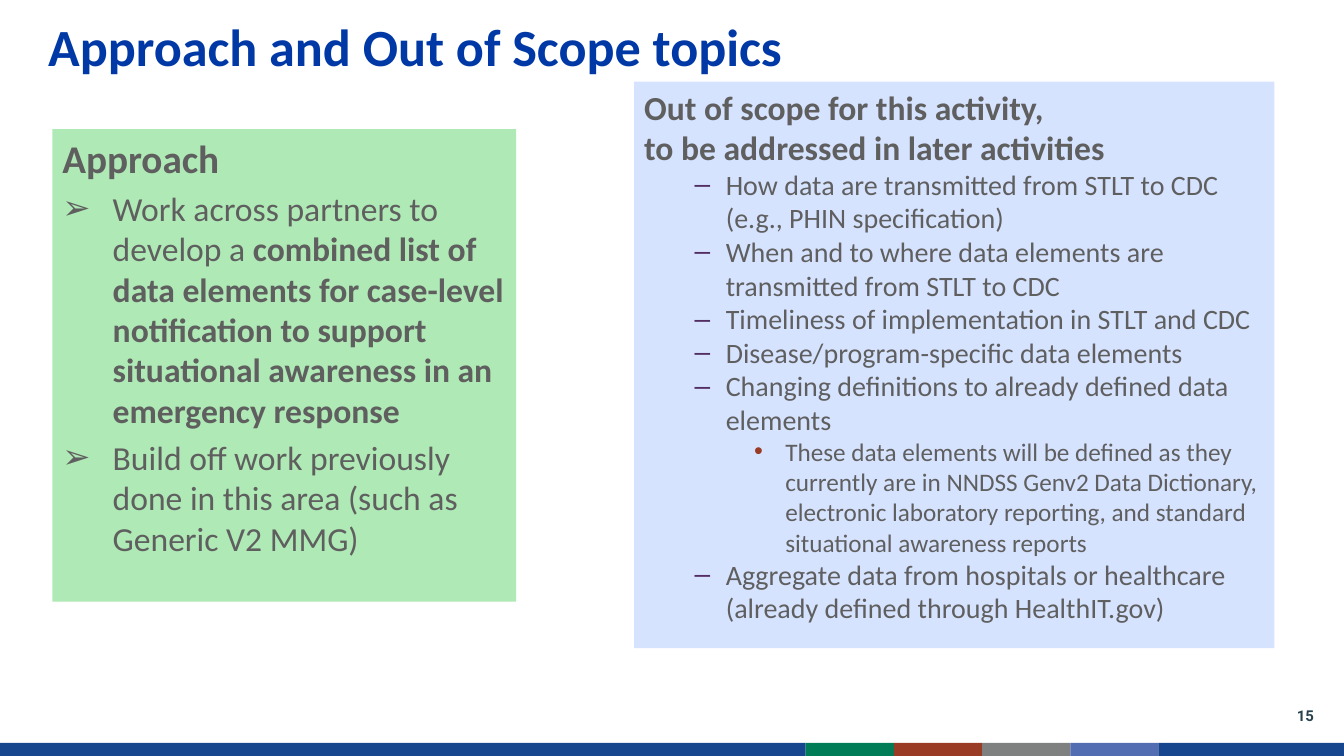
import pptx
import pptx.util
import pptx.dml.color
import pptx.enum.shapes
import pptx.enum.text
import lxml.etree

Inch, Pt = pptx.util.Inches, pptx.util.Pt
Anchor, Align = pptx.enum.text.MSO_ANCHOR, pptx.enum.text.PP_ALIGN
GREY, NAVY = "5F5F5F", "17468F"


def paint(part, tone):
    """Give a fill or a font a solid colour from a hex string."""
    if hasattr(part, "solid"):
        part.solid()
        part.fore_color.rgb = pptx.dml.color.RGBColor.from_string(tone)
    else:
        part.color.rgb = pptx.dml.color.RGBColor.from_string(tone)


def bullet(para, sign, tone, left, hang):
    """Put a coloured bullet on a paragraph with a hanging indent."""
    props = para._p.get_or_add_pPr()
    props.set("marL", str(Inch(left)))
    props.set("indent", str(-Inch(hang)))
    space = "{http://schemas.openxmlformats.org/drawingml/2006/main}"
    clr = lxml.etree.SubElement(props, space + "buClr")
    lxml.etree.SubElement(clr, space + "srgbClr", val=tone)
    lxml.etree.SubElement(props, space + "buFont", typeface="Arial")
    lxml.etree.SubElement(props, space + "buChar", char=sign)


deck = pptx.Presentation()
deck.slide_width, deck.slide_height = Inch(13.33), Inch(7.5)
slide = deck.slides.add_slide(deck.slide_layouts[6])

# Footer strip: a blue band with four equal tiles, then blue again
tile, start = 0.875, 7.99
tones = ["007D57", "993B25", "7F8080", "536DB3"]
rects = [(0, 7.37, start, 0.13, NAVY)]
rects += [(start + i * tile, 7.37, tile, 0.13, tone) for i, tone in enumerate(tones)]
end = start + len(tones) * tile
rects += [(end, 7.37, 13.33 - end, 0.13, NAVY)]

# Two panels
rects += [(0.52, 1.28, 4.6, 4.69, "AFE9B5"), (6.29, 0.81, 6.35, 5.62, "D6E3FF")]
shapes = []
for left, top, width, height, tone in rects:
    shape = slide.shapes.add_shape(
        pptx.enum.shapes.MSO_SHAPE.RECTANGLE,
        Inch(left), Inch(top), Inch(width), Inch(height))
    shape.shadow.inherit = False
    shape.line.fill.background()
    paint(shape.fill, tone)
    shapes.append(shape)

# Panel text: level, then pieces that alternate between plain and bold
plan = [
    ("head", "", "Approach"),
    ("arrow", "Work across partners to develop a ",
     "combined list of data elements for case-level notification to support "
     "situational awareness in an emergency response"),
    ("arrow", "Build off work previously done in this area (such as Generic V2 MMG)"),
]
scope = [
    ("lead", "", "Out of scope for this activity,"),
    ("lead", "", "to be addressed in later activities"),
    ("dash", "How data are transmitted from STLT to CDC (e.g., PHIN specification)"),
    ("dash", "When and to where data elements are transmitted from STLT to CDC"),
    ("dash", "Timeliness of implementation in STLT and CDC"),
    ("dash", "Disease/program-specific data elements"),
    ("dash", "Changing definitions to already defined data elements"),
    ("dot", "These data elements will be defined as they currently are in NNDSS Genv2 "
     "Data Dictionary, electronic laboratory reporting, and standard situational "
     "awareness reports"),
    ("dash", "Aggregate data from hospitals or healthcare "
     "(already defined through HealthIT.gov)"),
]
# Per kind: text size, outline level, space before, bullet
kinds = {
    "head": (28, 0, 0, None),
    "lead": (24, 0, 0, None),
    "arrow": (24, 0, 5, ("➢", GREY, 0.5, 0.5)),
    "dash": (20, 1, 0, ("–", "532E63", 0.81, 0.31)),
    "dot": (18, 2, 0, ("•", "9A3B26", 1.4, 0.31)),
}
for panel, rows in zip(shapes[-2:], (plan, scope)):
    frame = panel.text_frame
    frame.word_wrap = True
    frame.vertical_anchor = Anchor.TOP
    for i, (kind, *parts) in enumerate(rows):
        para = frame.add_paragraph() if i else frame.paragraphs[0]
        size, level, gap, mark = kinds[kind]
        para.alignment = Align.LEFT
        para.level = level
        para.space_before = Pt(gap)
        if mark:
            bullet(para, *mark)
        for j, part in enumerate(parts):
            if part:
                run = para.add_run()
                run.text = part
                run.font.name, run.font.size = "Calibri", Pt(size)
                run.font.bold = j == 1
                paint(run.font, GREY)

# Title and page number
labels = [
    ("Approach and Out of Scope topics", (0.38, -0.44, 12, 1.25),
     "Calibri", 37.3, "0039A6", Anchor.BOTTOM, Align.LEFT, Pt(40)),
    ("15", (12.46, 6.9, 0.67, 0.4),
     "Roboto", 10.7, "28434E", Anchor.MIDDLE, Align.RIGHT, None),
]
for text, place, face, size, tone, anchor, align, pitch in labels:
    frame = slide.shapes.add_textbox(*map(Inch, place)).text_frame
    frame.word_wrap = True
    frame.vertical_anchor = anchor
    frame.text = text
    para = frame.paragraphs[0]
    para.alignment, para.line_spacing = align, pitch
    font = para.runs[0].font
    font.name, font.size, font.bold = face, Pt(size), True
    paint(font, tone)

deck.save("out.pptx")
